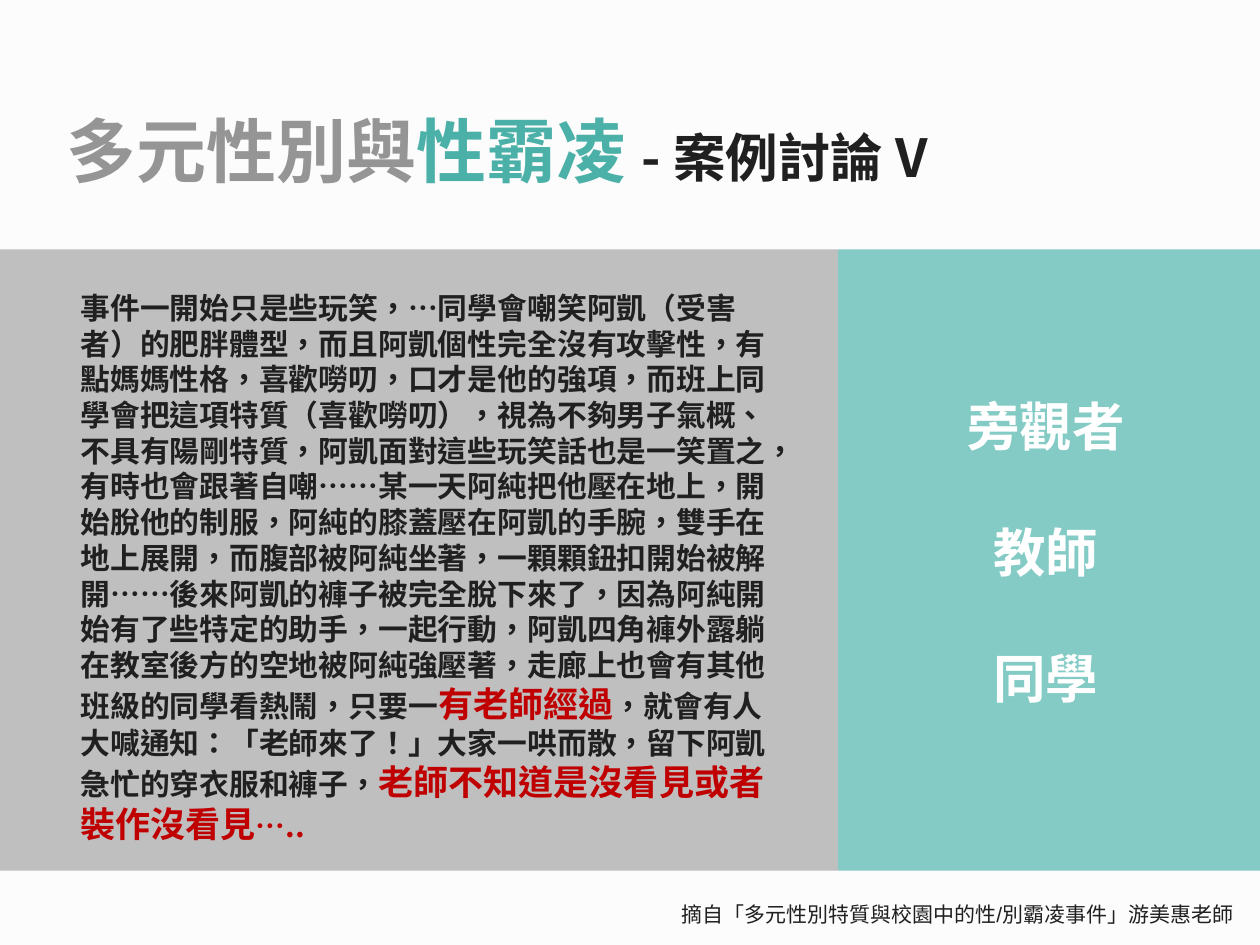
from pptx import Presentation
from pptx.dml.color import RGBColor
from pptx.enum.lang import MSO_LANGUAGE_ID
from pptx.enum.shapes import MSO_SHAPE
from pptx.enum.text import MSO_ANCHOR, PP_ALIGN
from pptx.oxml.ns import qn
from pptx.util import Inches, Pt

BACKGROUND = RGBColor(0xFC, 0xFC, 0xFC)
TEAL_PANEL = RGBColor(0x84, 0xCB, 0xC5)
GRAY_PANEL = RGBColor(0xBF, 0xBF, 0xBF)
TEAL = RGBColor(0x4B, 0xB1, 0xA8)
GRAY = RGBColor(0x95, 0x95, 0x95)
INK = RGBColor(0x20, 0x20, 0x20)
RED = RGBColor(0xC0, 0x00, 0x00)
WHITE = RGBColor(0xFF, 0xFF, 0xFF)
HEAVY = "Noto Sans CJK SC"
LIGHT = "Arial"

PANEL_TOP, PANEL_HEIGHT, PANEL_SPLIT = 1.98, 4.93, 6.65

TITLE = [("多元性別與", 40, GRAY), ("性霸凌 ", 40, TEAL), ("- 案例討論 V", 30, INK)]
ROLES = ["旁觀者", "教師", "同學"]
CREDIT = "摘自「多元性別特質與校園中的性/別霸凌事件」游美惠老師"
STORY = [
    ("事件一開始只是些玩笑，…同學會嘲笑阿凱（受害者）的肥胖體型，而且阿凱個性完全沒有攻擊性，"
     "有點媽媽性格，喜歡嘮叨，口才是他的強項，而班上同學會把這項特質（喜歡嘮叨），"
     "視為不夠男子氣概、不具有陽剛特質，阿凱面對這些玩笑話也是一笑置之，有時也會跟著自嘲……"
     "某一天阿純把他壓在地上，開始脫他的制服，阿純的膝蓋壓在阿凱的手腕，雙手在地上展開，"
     "而腹部被阿純坐著，一顆顆鈕扣開始被解開……後來阿凱的褲子被完全脫下來了，"
     "因為阿純開始有了些特定的助手，一起行動，阿凱四角褲外露躺在教室後方的空地被阿純強壓著，"
     "走廊上也會有其他班級的同學看熱鬧，只要一", 17, INK),
    ("有老師經過", 20, RED),
    ("，就會有人大喊通知：「老師來了！」大家一哄而散，留下阿凱急忙的穿衣服和褲子，", 17, INK),
    ("老師不知道是沒看見或者裝作沒看見", 20, RED),
    ("…..", 17, RED),
]


def add_panel(slide, left, width, color):
    panel = slide.shapes.add_shape(MSO_SHAPE.RECTANGLE, Inches(left), Inches(PANEL_TOP),
                                   Inches(width), Inches(PANEL_HEIGHT))
    panel.shadow.inherit = False
    panel.fill.solid()
    panel.fill.fore_color.rgb = color
    panel.line.fill.background()


def add_text_frame(slide, left, top, width, height, anchor=MSO_ANCHOR.TOP):
    frame = slide.shapes.add_textbox(Inches(left), Inches(top),
                                     Inches(width), Inches(height)).text_frame
    frame.word_wrap = True
    frame.vertical_anchor = anchor
    return frame


def add_run(paragraph, text, size, color, typeface=HEAVY, bold=True):
    """Add Traditional Chinese text with matching Latin and East Asian typefaces."""
    run = paragraph.add_run()
    run.text = text
    font = run.font
    font.size, font.bold, font.name = Pt(size), bold, typeface
    font.color.rgb = color
    font.language_id = MSO_LANGUAGE_ID.TRADITIONAL_CHINESE
    east_asian = run._r.get_or_add_rPr().makeelement(qn("a:ea"), {"typeface": typeface})
    run._r.get_or_add_rPr().append(east_asian)


def add_roles(slide):
    frame = add_text_frame(slide, 6.89, 3.67, 2.82, 1.41, MSO_ANCHOR.MIDDLE)
    for index, role in enumerate(ROLES):
        paragraph = frame.paragraphs[0] if index == 0 else frame.add_paragraph()
        paragraph.alignment = PP_ALIGN.CENTER
        paragraph.space_before = Pt(36 if index else 0)
        add_run(paragraph, role, 30, WHITE)


def main():
    presentation = Presentation()
    presentation.slide_width, presentation.slide_height = Inches(10), Inches(7.5)
    slide = presentation.slides.add_slide(presentation.slide_layouts[6])
    slide.background.fill.solid()
    slide.background.fill.fore_color.rgb = BACKGROUND

    add_panel(slide, PANEL_SPLIT, 10 - PANEL_SPLIT, TEAL_PANEL)
    add_roles(slide)
    add_panel(slide, 0, PANEL_SPLIT, GRAY_PANEL)

    title = add_text_frame(slide, 0.43, 0.76, 9, 0.85, MSO_ANCHOR.MIDDLE)
    for text, size, color in TITLE:
        add_run(title.paragraphs[0], text, size, color)

    credit = add_text_frame(slide, 5.31, 7.11, 4.8, 0.3)
    add_run(credit.paragraphs[0], CREDIT, 12, INK, LIGHT, bold=False)

    story = add_text_frame(slide, 0.54, 2.25, 5.83, 4.54)
    for text, size, color in STORY:
        add_run(story.paragraphs[0], text, size, color)

    presentation.save("out.pptx")


if __name__ == "__main__":
    main()
